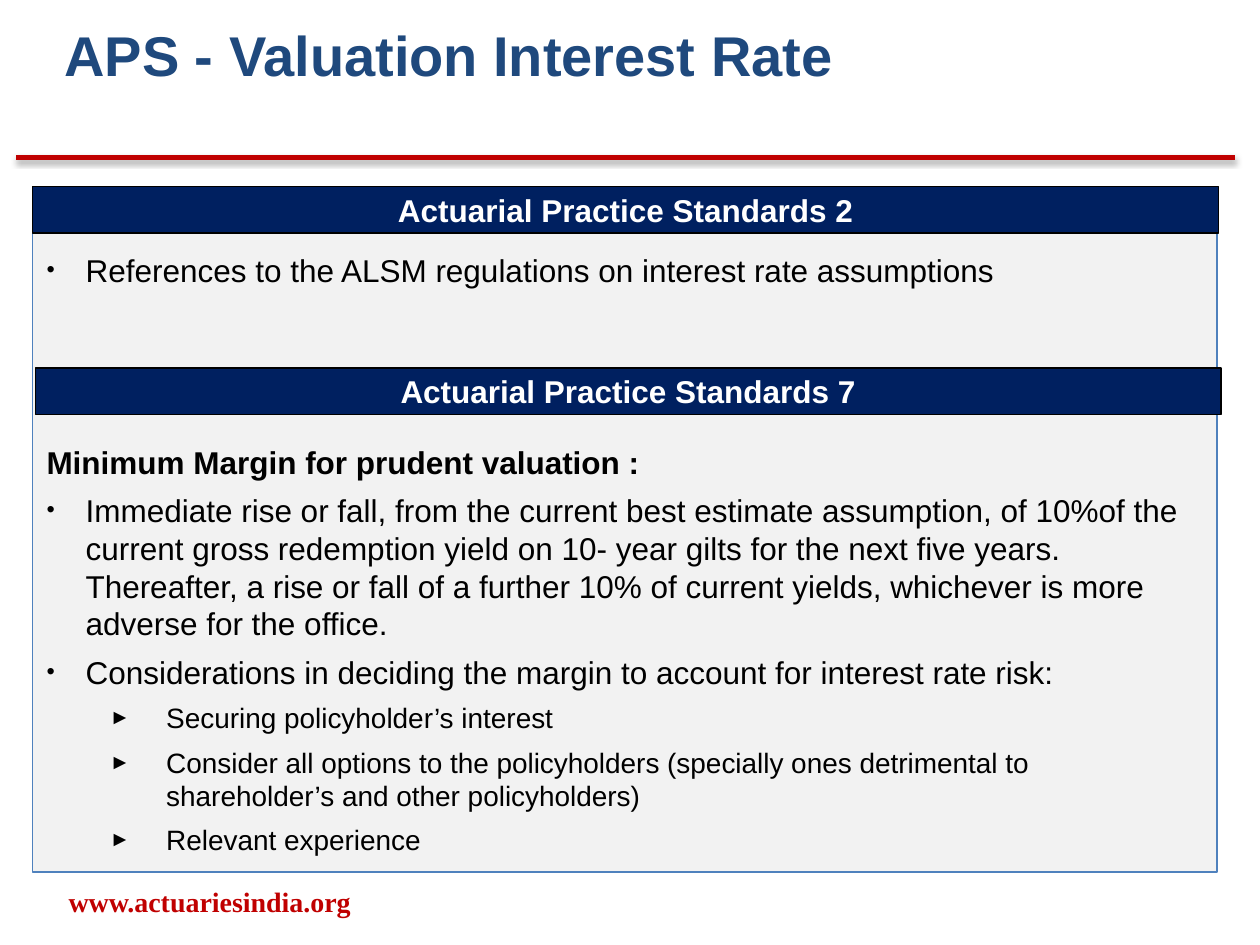
from lxml.etree import SubElement
from pptx import Presentation
from pptx.dml.color import RGBColor
from pptx.enum.shapes import MSO_CONNECTOR, MSO_SHAPE
from pptx.enum.text import MSO_ANCHOR, PP_ALIGN
from pptx.oxml.ns import qn
from pptx.util import Inches, Pt

NAVY = RGBColor(0x00, 0x20, 0x60)
TITLE_BLUE = RGBColor(0x1F, 0x49, 0x7D)
BORDER_BLUE = RGBColor(0x4F, 0x81, 0xBD)
RED = RGBColor(0xC0, 0x00, 0x00)
PALE_GREY = RGBColor(0xF2, 0xF2, 0xF2)
BLACK = RGBColor(0x00, 0x00, 0x00)
WHITE = RGBColor(0xFF, 0xFF, 0xFF)

STANDARDS_2 = ["References to the ALSM regulations on interest rate assumptions"]
MARGIN_HEADING = "Minimum Margin for prudent valuation :"
MARGIN_POINTS = [
    "Immediate rise or fall, from the current best estimate assumption, of 10%of the "
    "current gross redemption yield on 10- year gilts for the next five years. "
    "Thereafter, a rise or fall of a further 10% of current yields, whichever is more "
    "adverse for the office.",
    "Considerations in deciding the margin to account for interest rate risk:",
]
CONSIDERATIONS = [
    "Securing policyholder’s interest",
    "Consider all options to the policyholders (specially ones detrimental to "
    "shareholder’s and other policyholders)",
    "Relevant experience",
]


class SlideBuilder:
    font_name = "Arial"
    body_size = 18
    sub_size = 16
    space_after = Pt(6)

    def __init__(self, slide):
        self.slide = slide

    def style(self, paragraph, size, color, bold=False, name=None):
        font = paragraph.font
        font.name = name or self.font_name
        font.size = Pt(size)
        font.bold = bold
        font.color.rgb = color

    def title(self, text, left, top, width, height):
        title = self.slide.shapes.title
        title.left, title.top = Inches(left), Inches(top)
        title.width, title.height = Inches(width), Inches(height)
        frame = title.text_frame
        frame.text = text
        frame.vertical_anchor = MSO_ANCHOR.TOP
        frame.paragraphs[0].alignment = PP_ALIGN.LEFT
        self.style(frame.paragraphs[0], 32, TITLE_BLUE, bold=True)

    def rule(self, left, right, y):
        rule = self.slide.shapes.add_connector(
            MSO_CONNECTOR.STRAIGHT, Inches(left), Inches(y), Inches(right), Inches(y))
        rule.line.color.rgb = RED
        rule.line.width = Pt(3)
        effects = SubElement(rule._element.spPr, qn("a:effectLst"))
        shadow = SubElement(effects, qn("a:outerShdw"), blurRad=str(Pt(3.1)),
                            dist=str(Pt(1.6)), dir="5400000", rotWithShape="0")
        shade = SubElement(shadow, qn("a:srgbClr"), val=str(BLACK))
        SubElement(shade, qn("a:alpha"), val="38000")

    def rectangle(self, left, top, width, height, fill, border):
        rectangle = self.slide.shapes.add_shape(
            MSO_SHAPE.RECTANGLE, Inches(left), Inches(top), Inches(width), Inches(height))
        rectangle.shadow.inherit = False
        rectangle.fill.solid()
        rectangle.fill.fore_color.rgb = fill
        rectangle.line.color.rgb = border
        rectangle.line.width = Pt(0.75)
        return rectangle.text_frame

    def banner(self, text, left, top, width, height):
        frame = self.rectangle(left, top, width, height, NAVY, BLACK)
        frame.word_wrap = False
        frame.vertical_anchor = MSO_ANCHOR.MIDDLE
        frame.text = text
        frame.paragraphs[0].alignment = PP_ALIGN.CENTER
        self.style(frame.paragraphs[0], self.body_size, WHITE, bold=True)

    def panel(self, left, top, width, height, inset, text_top):
        frame = self.rectangle(left, top, width, height, PALE_GREY, BORDER_BLUE)
        frame.word_wrap = True
        frame.vertical_anchor = MSO_ANCHOR.TOP
        frame.margin_left = frame.margin_right = frame.margin_bottom = Inches(inset)
        frame.margin_top = Inches(text_top)
        return frame

    def body_line(self, frame, text, size, bold=False, bullet=None, indent=0, hanging=0, level=0):
        first = frame.paragraphs[0]
        line = frame.add_paragraph() if first.text else first
        line.text = text
        line.level = level
        line.alignment = PP_ALIGN.LEFT
        line.space_after = self.space_after
        if bullet:
            properties = line._p.get_or_add_pPr()
            properties.set("marL", str(Inches(indent)))
            properties.set("indent", str(-Inches(hanging)))
            SubElement(properties, qn("a:buSzPct"), val="75000")
            SubElement(properties, qn("a:buFont"), typeface=self.font_name)
            SubElement(properties, qn("a:buChar"), char=bullet)
        self.style(line, size, BLACK, bold)
        return line

    def points(self, frame, texts):
        for text in texts:
            self.body_line(frame, text, self.body_size, bullet="•", indent=0.31, hanging=0.31)

    def sub_points(self, frame, texts):
        for text in texts:
            self.body_line(frame, text, self.sub_size, bullet="►", indent=0.95, hanging=0.45, level=1)

    def footer(self, text, left, top, width, height):
        footer = self.slide.shapes.add_textbox(
            Inches(left), Inches(top), Inches(width), Inches(height))
        frame = footer.text_frame
        frame.word_wrap = True
        frame.vertical_anchor = MSO_ANCHOR.MIDDLE
        frame.text = text
        frame.paragraphs[0].alignment = PP_ALIGN.CENTER
        self.style(frame.paragraphs[0], 16, RED, bold=True, name="Times New Roman")


def main():
    presentation = Presentation()
    presentation.slide_width, presentation.slide_height = Inches(10), Inches(7.5)
    builder = SlideBuilder(presentation.slides.add_slide(presentation.slide_layouts[5]))

    builder.rule(0.13, 9.8, 1.25)
    builder.title("APS - Valuation Interest Rate", 0.41, 0.11, 9.01, 0.64)
    builder.footer("www.actuariesindia.org", 0.08, 6.95, 3.17, 0.4)

    standards = builder.panel(0.26, 1.5, 9.4, 5.42, inset=0.11, text_top=0.49)
    builder.points(standards, STANDARDS_2)
    heading = builder.body_line(standards, MARGIN_HEADING, builder.body_size, bold=True)
    heading.space_before = Pt(82)
    builder.points(standards, MARGIN_POINTS)
    builder.sub_points(standards, CONSIDERATIONS)

    builder.banner("Actuarial Practice Standards 2", 0.26, 1.48, 9.41, 0.37)
    builder.banner("Actuarial Practice Standards 7", 0.28, 2.92, 9.41, 0.37)
    presentation.save("out.pptx")


if __name__ == "__main__":
    main()
